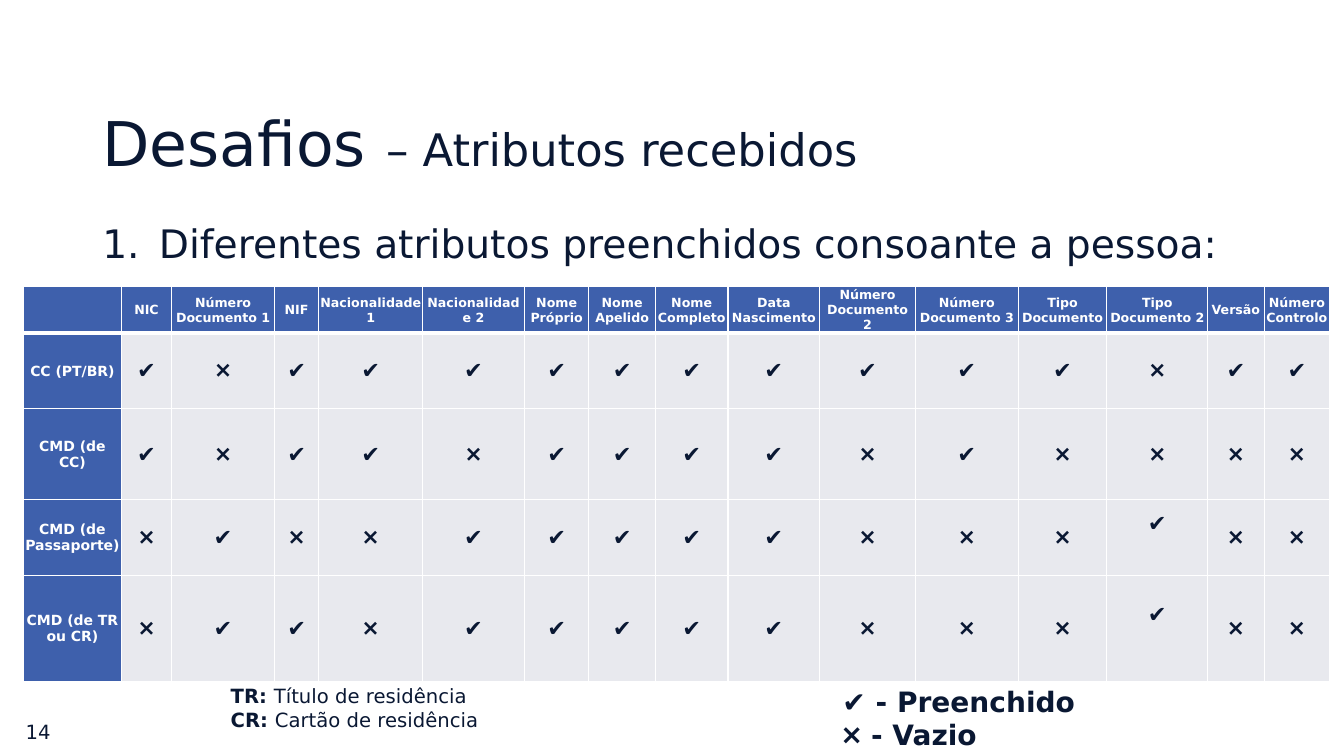
from dataclasses import dataclass

from lxml.etree import SubElement
from pptx import Presentation
from pptx.dml.color import RGBColor
from pptx.enum.text import MSO_ANCHOR, MSO_AUTO_SIZE, PP_ALIGN
from pptx.oxml.ns import qn
from pptx.slide import Slide
from pptx.table import _Cell
from pptx.text.text import TextFrame, _Paragraph
from pptx.util import Pt

FONT = "DejaVu Sans"
NAVY, BLUE, GREY, WHITE = "0A1833", "3E60AC", "E8E9EE", "FFFFFF"
MARKS = {"+": "✔️", "-": "❌"}
RAISED_COLUMN = "Tipo Documento 2"
RAISED_ROWS = ("CMD (de Passaporte)", "CMD (de TR ou CR)")


@dataclass(frozen=True)
class Span:
    text: str
    size: float
    bold: bool = False
    color: str = NAVY


@dataclass(frozen=True)
class Box:
    left: float
    top: float
    width: float
    height: float
    lines: tuple[tuple[Span, ...], ...]
    alignment: PP_ALIGN = PP_ALIGN.LEFT
    anchor: MSO_ANCHOR = MSO_ANCHOR.TOP
    wrap: bool = True
    line_spacing: float = 1.0
    numbered: bool = False


@dataclass(frozen=True)
class Column:
    heading: str
    width: float


@dataclass(frozen=True)
class Row:
    label: str
    height: float
    marks: str


COLUMNS = (
    Column("", 69.84),
    Column("NIC", 36),
    Column("Número Documento 1", 73.44),
    Column("NIF", 31.68),
    Column("Nacionalidade 1", 74.16),
    Column("Nacionalidade 2", 72.72),
    Column("Nome Próprio", 46.08),
    Column("Nome Apelido", 47.52),
    Column("Nome Completo", 51.84),
    Column("Data Nascimento", 65.52),
    Column("Número Documento 2", 68.4),
    Column("Número Documento 3", 73.44),
    Column("Tipo Documento", 63.36),
    Column("Tipo Documento 2", 72),
    Column("Versão", 40.32),
    Column("Número Controlo", 46.8),
)
HEADER_HEIGHT = 33
ROWS = (
    Row("CC (PT/BR)", 54, "+-++++++++++-++"),
    Row("CMD (de CC)", 65, "+-++-++++-+----"),
    Row("CMD (de Passaporte)", 54, "-+--+++++---+--"),
    Row("CMD (de TR ou CR)", 76.3, "-++-+++++---+--"),
)

TITLE = Box(66, 52.5, 828, 104.4,
            ((Span("Desafios ", 44), Span("– Atributos recebidos", 32)),),
            anchor=MSO_ANCHOR.MIDDLE, line_spacing=0.9)
BOXES = (
    Box(66, 157, 828, 46,
        ((Span("Diferentes atributos preenchidos consoante a pessoa:", 28),),),
        line_spacing=0.9, numbered=True),
    Box(594.7, 485.3, 208, 54.7,
        ((Span("✔️ - Preenchido", 20, True),), (Span("❌ - Vazio", 20, True),))),
    Box(0, 508.3, 43.2, 28.8, ((Span("14", 14),),),
        alignment=PP_ALIGN.RIGHT, anchor=MSO_ANCHOR.MIDDLE),
    Box(157.7, 485.3, 192.2, 41,
        ((Span("TR: ", 14, True), Span("Título de residência", 14)),
         (Span("CR: ", 14, True), Span("Cartão de residência", 14))),
        wrap=False),
)


def color(value: str) -> RGBColor:
    return RGBColor.from_string(value)


def assign(target: object, values: dict[str, object]) -> None:
    """Set every named attribute of the target."""
    for name, value in values.items():
        setattr(target, name, value)


def add_span(para: _Paragraph, span: Span) -> None:
    run = para.add_run()
    run.text = span.text
    assign(run.font, {"name": FONT, "size": Pt(span.size), "bold": span.bold})
    run.font.color.rgb = color(span.color)


def number_paragraph(para: _Paragraph) -> None:
    properties = para._p.get_or_add_pPr()
    properties.set("marL", str(Pt(40.5)))
    properties.set("indent", str(-Pt(40.5)))
    SubElement(properties, qn("a:buFont"), typeface=FONT)
    SubElement(properties, qn("a:buAutoNum"), type="arabicPeriod")


def fill_frame(frame: TextFrame, box: Box) -> None:
    assign(frame, {"word_wrap": box.wrap, "auto_size": MSO_AUTO_SIZE.NONE,
                   "vertical_anchor": box.anchor})
    for index, line in enumerate(box.lines):
        para = frame.add_paragraph() if index else frame.paragraphs[0]
        assign(para, {"alignment": box.alignment, "line_spacing": box.line_spacing})
        if box.numbered:
            number_paragraph(para)
        for span in line:
            add_span(para, span)


def add_title(slide: Slide, box: Box) -> None:
    title = slide.shapes.title
    assign(title, {side: Pt(getattr(box, side))
                   for side in ("left", "top", "width", "height")})
    fill_frame(title.text_frame, box)


def add_box(slide: Slide, box: Box) -> None:
    shape = slide.shapes.add_textbox(
        Pt(box.left), Pt(box.top), Pt(box.width), Pt(box.height))
    fill_frame(shape.text_frame, box)


def set_borders(cell: _Cell, top: float, bottom: float) -> None:
    properties = cell._tc.get_or_add_tcPr()
    for tag, width in {"lnL": 1, "lnR": 1, "lnT": top, "lnB": bottom}.items():
        line = SubElement(properties, qn(f"a:{tag}"), w=str(Pt(width)))
        fill = SubElement(line, qn("a:solidFill"))
        SubElement(fill, qn("a:srgbClr"), val=WHITE)


def fill_cell(cell: _Cell, span: Span, fill: str, bottom_margin: float = 0) -> None:
    assign(cell, {"margin_left": Pt(0.72), "margin_right": Pt(0.72),
                  "margin_top": Pt(0.72), "margin_bottom": Pt(bottom_margin),
                  "vertical_anchor": MSO_ANCHOR.MIDDLE})
    cell.fill.solid()
    cell.fill.fore_color.rgb = color(fill)
    if span.text:
        para = cell.text_frame.paragraphs[0]
        para.alignment = PP_ALIGN.CENTER
        add_span(para, span)


def add_attribute_table(slide: Slide) -> None:
    heights = [HEADER_HEIGHT, *(row.height for row in ROWS)]
    table = slide.shapes.add_table(
        len(heights), len(COLUMNS), Pt(16.8), Pt(204.8),
        Pt(sum(column.width for column in COLUMNS)), Pt(sum(heights))).table
    table.horz_banding = False
    for table_row, height in zip(table.rows, heights):
        table_row.height = Pt(height)
    for index, column in enumerate(COLUMNS):
        table.columns[index].width = Pt(column.width)
        for row_index in range(len(heights)):
            set_borders(table.cell(row_index, index),
                        top=3 if row_index == 1 else 1,
                        bottom=3 if row_index == 0 else 1)
        fill_cell(table.cell(0, index), Span(column.heading, 9, True, WHITE), BLUE)
    for row_index, row in enumerate(ROWS, start=1):
        fill_cell(table.cell(row_index, 0), Span(row.label, 10, True, WHITE), BLUE)
        for index, mark in enumerate(row.marks, start=1):
            raised = COLUMNS[index].heading == RAISED_COLUMN and row.label in RAISED_ROWS
            fill_cell(table.cell(row_index, index), Span(MARKS[mark], 16, True),
                      GREY, bottom_margin=20 if raised else 0)


def main() -> None:
    deck = Presentation()
    assign(deck, {"slide_width": Pt(960), "slide_height": Pt(540)})
    slide = deck.slides.add_slide(deck.slide_layouts.get_by_name("Title Only"))
    add_title(slide, TITLE)
    add_attribute_table(slide)
    for box in BOXES:
        add_box(slide, box)
    deck.save("out.pptx")


if __name__ == "__main__":
    main()
